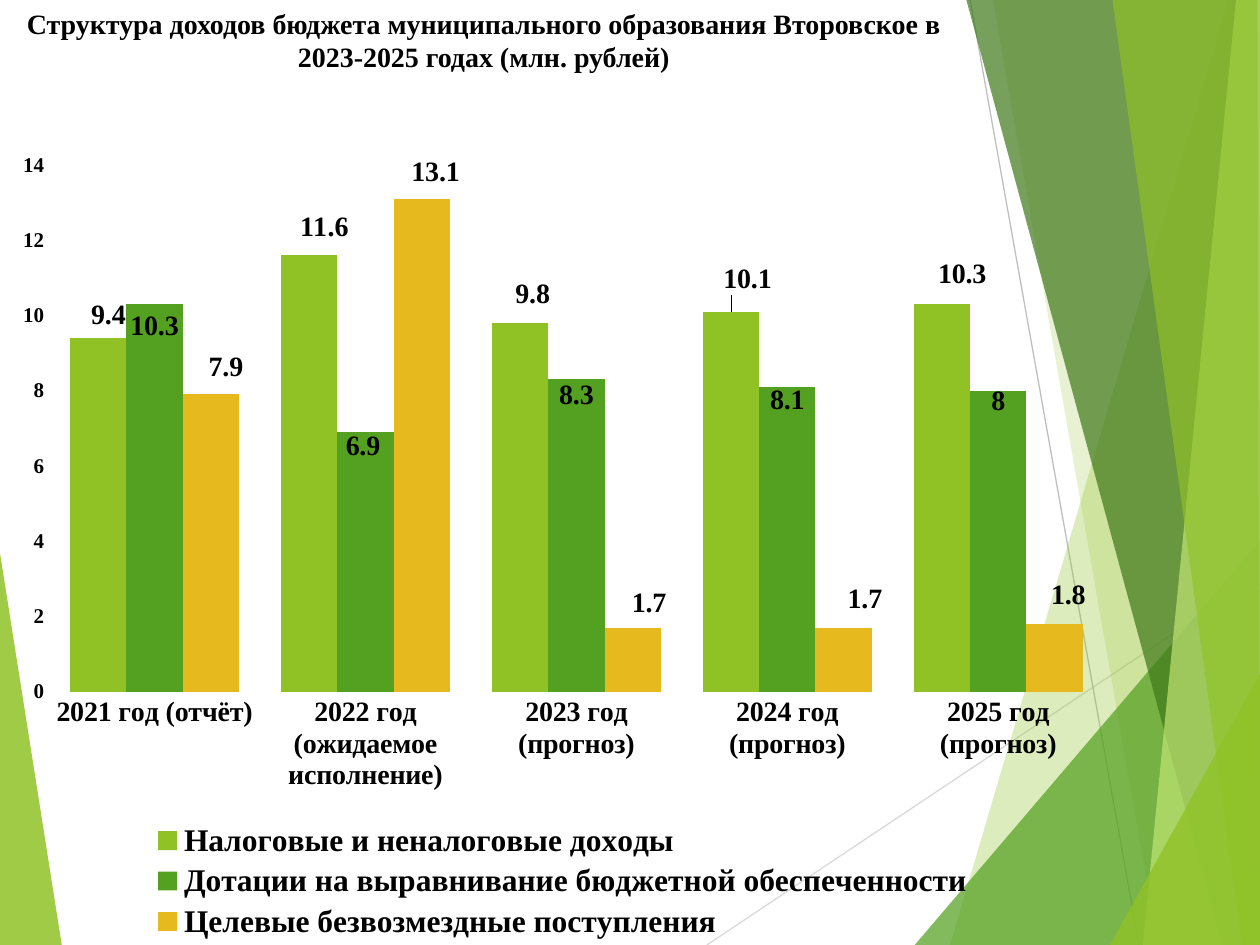
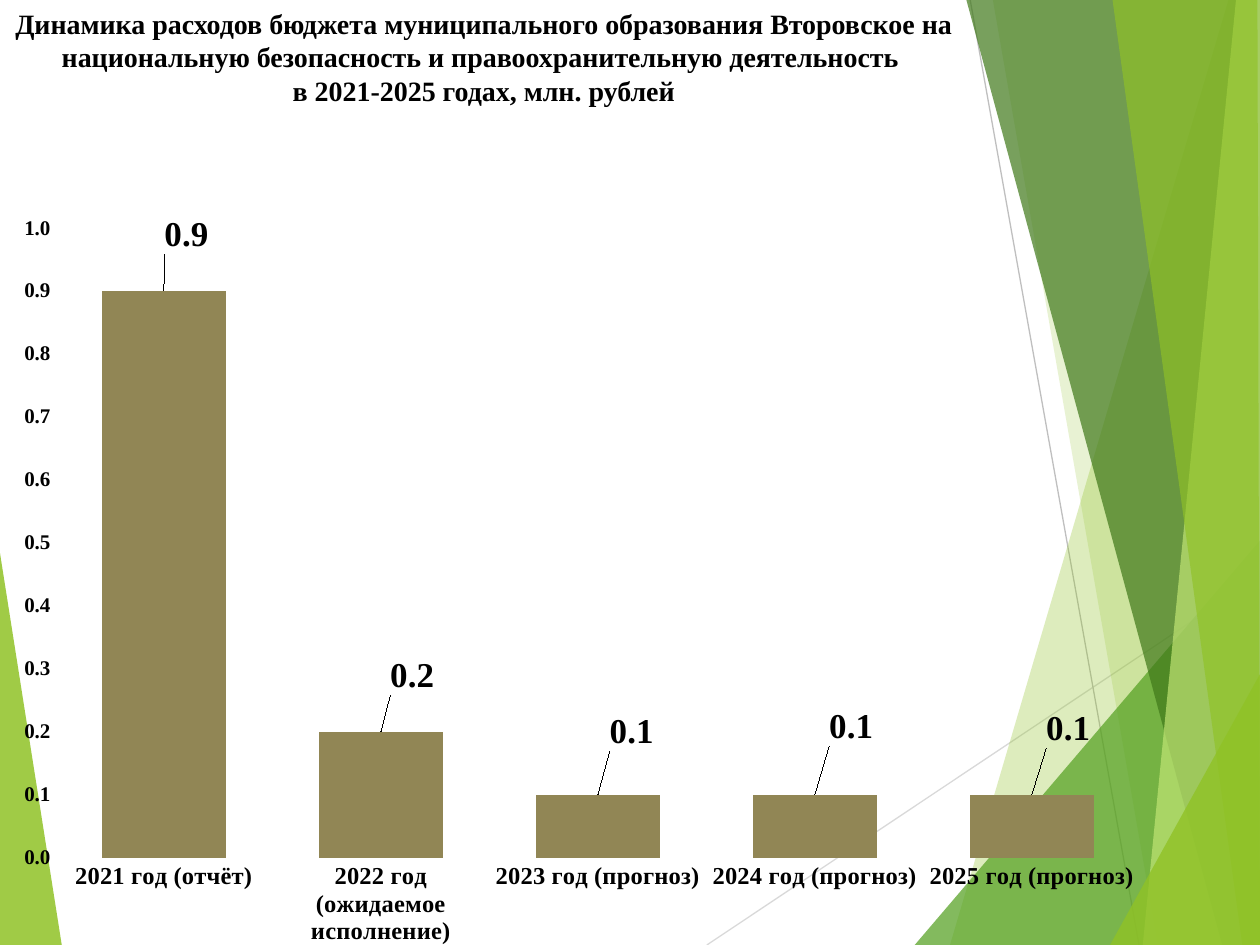
from typing import NamedTuple

from lxml import etree
from pptx import Presentation
from pptx import util as u
from pptx.chart.data import CategoryChartData
from pptx.dml.color import RGBColor
from pptx.enum import chart as ch, shapes, text
from pptx.oxml.ns import qn

FONT = "Times New Roman"
BLACK, LIME, GREEN, GOLD, OLIVE = "000000", "90C226", "54A021", "E6B91E", "918655"
YEARS = ["2021 год (отчёт)", "2022 год (ожидаемое исполнение)",
         "2023 год (прогноз)", "2024 год (прогноз)", "2025 год (прогноз)"]


class Band(NamedTuple):
    points: list[tuple[float, float]]
    color: str
    alpha: int


class Ray(NamedTuple):
    start: tuple[float, float]
    end: tuple[float, float]
    color: str


class Bars(NamedTuple):
    """One series; shifts move its labels by inches from the bar tops."""
    name: str
    values: list[float]
    color: str
    shifts: list[tuple[float, float]]


class Page(NamedTuple):
    lines: list[str]
    depth: float
    box: tuple[float, float, float, float]
    plot: tuple[float, float, float, float]
    bars: list[Bars]
    top: float
    step: float
    format: str
    year_size: int
    label_size: int
    legend: bool


WEDGE = Band([(0, 4.39), (0.49, 7.5), (0, 7.5)], LIME, 85)
RAYS = [Ray((5.61, 7.5), (10, 4.57), "D9D9D9"), Ray((7.7, 0), (9.04, 7.5), "BFBFBF")]
BANDS = [
    Band([(9.75, 0), (7.54, 7.5), (10, 7.5), (10, 0)], LIME, 30),
    Band([(7.88, 0), (9.19, 7.5), (10, 7.5), (10, 0)], LIME, 20),
    Band([(7.26, 7.5), (10, 4.29), (10, 7.5)], GREEN, 72),
    Band([(7.67, 0), (9.7, 7.5), (10, 7.5), (10, 0)], "3F7819", 70),
    Band([(9.81, 0), (9.07, 7.5), (10, 7.5), (10, 0)], "C0E474", 70),
    Band([(8.83, 0), (9.86, 7.5), (10, 7.5), (9.98, 0)], LIME, 65),
    Band([(8.81, 7.5), (10, 5.35), (10, 7.5)], LIME, 80),
]

PAGES = [
    Page(["Структура доходов бюджета муниципального образования Второвское "
          "в 2023-2025 годах (млн. рублей)"],
         1.09, (0, 1.09, 8.93, 6.41), (0.39, 0.22, 8.37, 4.18),
         [Bars("Налоговые и неналоговые доходы", [9.4, 11.6, 9.8, 10.1, 10.3], LIME,
               [(0.08, -0.02), (0.12, -0.06), (0.1, -0.06), (0.13, -0.09), (0.16, -0.07)]),
          Bars("Дотации на выравнивание бюджетной обеспеченности",
               [10.3, 6.9, 8.3, 8.1, 8], GREEN,
               [(0, 0.34), (-0.02, 0.28), (0, 0.29), (0, 0.27), (0, 0.25)]),
          Bars("Целевые безвозмездные поступления", [7.9, 13.1, 1.7, 1.7, 1.8], GOLD,
               [(0.12, -0.05), (0.11, -0.05), (0.13, -0.03), (0.17, -0.06), (0.11, -0.06)])],
         14, 2, "General", 16, 16, True),
    Page(["Динамика расходов бюджета муниципального образования Второвское на "
          "национальную безопасность и правоохранительную деятельность ",
          "в 2021-2025 годах, млн. рублей"],
         1.21, (0, 1.71, 9.06, 5.79), (0.44, 0.09, 8.61, 5.03),
         [Bars("Series 1", [0.9, 0.2, 0.1, 0.1, 0.1], OLIVE,
               [(0.18, -0.25), (0.25, -0.25), (0.27, -0.31), (0.29, -0.35), (0.29, -0.33)])],
         1, 0.1, "0.0", 14, 20, False),
]


def rgb(color: str) -> RGBColor:
    return RGBColor.from_string(color)


def style(font, size: int, color: str = BLACK, bold: bool = True) -> None:
    font.name, font.size, font.bold = FONT, u.Pt(size), bold
    font.color.rgb = rgb(color)


def write(frame, lines: list[str], *, size: int, align=text.PP_ALIGN.CENTER) -> None:
    frame.text = "\n".join(lines)
    frame.word_wrap = True
    frame.auto_size = text.MSO_AUTO_SIZE.NONE
    frame.vertical_anchor = text.MSO_ANCHOR.TOP
    for para in frame.paragraphs:
        para.alignment = align
        for run in para.runs:
            style(run.font, size)


def draw_band(slide, band: Band) -> None:
    points = [(u.Inches(x), u.Inches(y)) for x, y in band.points]
    pen = slide.shapes.build_freeform(*points[0])
    pen.add_line_segments(points[1:])
    shape = pen.convert_to_shape()
    shape.shadow.inherit = False
    shape.line.fill.background()
    shape.fill.solid()
    shape.fill.fore_color.rgb = rgb(band.color)
    tint = shape.element.xpath("./p:spPr/a:solidFill/a:srgbClr")[0]
    etree.SubElement(tint, qn("a:alpha")).set("val", str(band.alpha * 1000))


def draw_ray(slide, ray: Ray) -> None:
    ends = [u.Inches(n) for n in ray.start + ray.end]
    line = slide.shapes.add_connector(shapes.MSO_CONNECTOR.STRAIGHT, *ends)
    line.line.color.rgb = rgb(ray.color)
    line.line.width = u.Pt(0.75)
    etree.SubElement(line.element.spPr, qn("a:effectLst"))


def draw_back(slide) -> None:
    draw_band(slide, WEDGE)
    for ray in RAYS:
        draw_ray(slide, ray)
    for band in BANDS:
        draw_band(slide, band)


def layout(**values) -> etree._Element:
    """Manual chart layout whose children follow the given keywords."""
    node = etree.Element(qn("c:layout"))
    manual = etree.SubElement(node, qn("c:manualLayout"))
    for key, value in values.items():
        etree.SubElement(manual, qn("c:" + key)).set("val", str(value))
    return node


def clear_fill() -> etree._Element:
    node = etree.Element(qn("c:spPr"))
    etree.SubElement(node, qn("a:noFill"))
    line = etree.SubElement(node, qn("a:ln"))
    etree.SubElement(line, qn("a:noFill"))
    return node


def place(chart, page: Page) -> None:
    """Set the plot area and label offsets, and make the chart clear."""
    wide, high = page.box[2:]
    x, y, w, h = page.plot
    area = chart.element.xpath("c:chart/c:plotArea")[0]
    for old in area.findall(qn("c:layout")):
        area.remove(old)
    area.insert(0, layout(layoutTarget="inner", xMode="edge", yMode="edge",
                          x=x / wide, y=y / high, w=w / wide, h=h / high))
    area.append(clear_fill())
    chart.element.find(qn("c:chart")).addnext(clear_fill())
    shifts = [shift for bars in page.bars for shift in bars.shifts]
    for label, (dx, dy) in zip(chart.element.xpath(".//c:dLbl"), shifts):
        label.find(qn("c:idx")).addnext(layout(x=dx / wide, y=dy / high))


def format_axis(axis, size: int) -> None:
    axis.has_major_gridlines = False
    axis.major_tick_mark = axis.minor_tick_mark = ch.XL_TICK_MARK.NONE
    axis.format.line.fill.background()
    style(axis.tick_labels.font, size)


def draw_chart(slide, page: Page) -> None:
    data = CategoryChartData(number_format=page.format)
    data.categories = YEARS
    for bars in page.bars:
        data.add_series(bars.name, bars.values)
    box = [u.Inches(n) for n in page.box]
    chart = slide.shapes.add_chart(ch.XL_CHART_TYPE.COLUMN_CLUSTERED, *box, data).chart
    chart.has_title = False
    style(chart.font, 10, bold=False)
    chart.font.name = "Karla"
    chart.has_legend = page.legend
    if page.legend:
        chart.legend.position = ch.XL_LEGEND_POSITION.BOTTOM
        chart.legend.include_in_layout = False
        style(chart.legend.font, 18)

    format_axis(chart.category_axis, page.year_size)
    scale = chart.value_axis
    format_axis(scale, 12)
    scale.minimum_scale, scale.maximum_scale, scale.major_unit = 0, page.top, page.step
    scale.tick_labels.number_format = page.format
    scale.tick_labels.number_format_is_linked = False

    plot = chart.plots[0]
    plot.gap_width, plot.overlap, plot.vary_by_categories = 75, 0, False
    for series, bars in zip(plot.series, page.bars):
        series.format.fill.solid()
        series.format.fill.fore_color.rgb = rgb(bars.color)
        series.invert_if_negative = False
        for i in range(len(YEARS)):
            label = series.points[i].data_label
            style(label.font, page.label_size)
            label.position = ch.XL_LABEL_POSITION.OUTSIDE_END
    place(chart, page)


def add_page(deck, page: Page) -> None:
    slide = deck.slides.add_slide(deck.slide_layouts[5])
    draw_back(slide)
    title = slide.shapes.title
    title.left = title.top = 0
    title.width, title.height = u.Inches(7.68), u.Inches(page.depth)
    write(title.text_frame, page.lines, size=16)
    draw_chart(slide, page)


def main() -> None:
    deck = Presentation()
    deck.slide_width, deck.slide_height = u.Inches(10), u.Inches(7.5)
    for page in PAGES:
        add_page(deck, page)
    deck.save("out.pptx")


if __name__ == "__main__":
    main()
